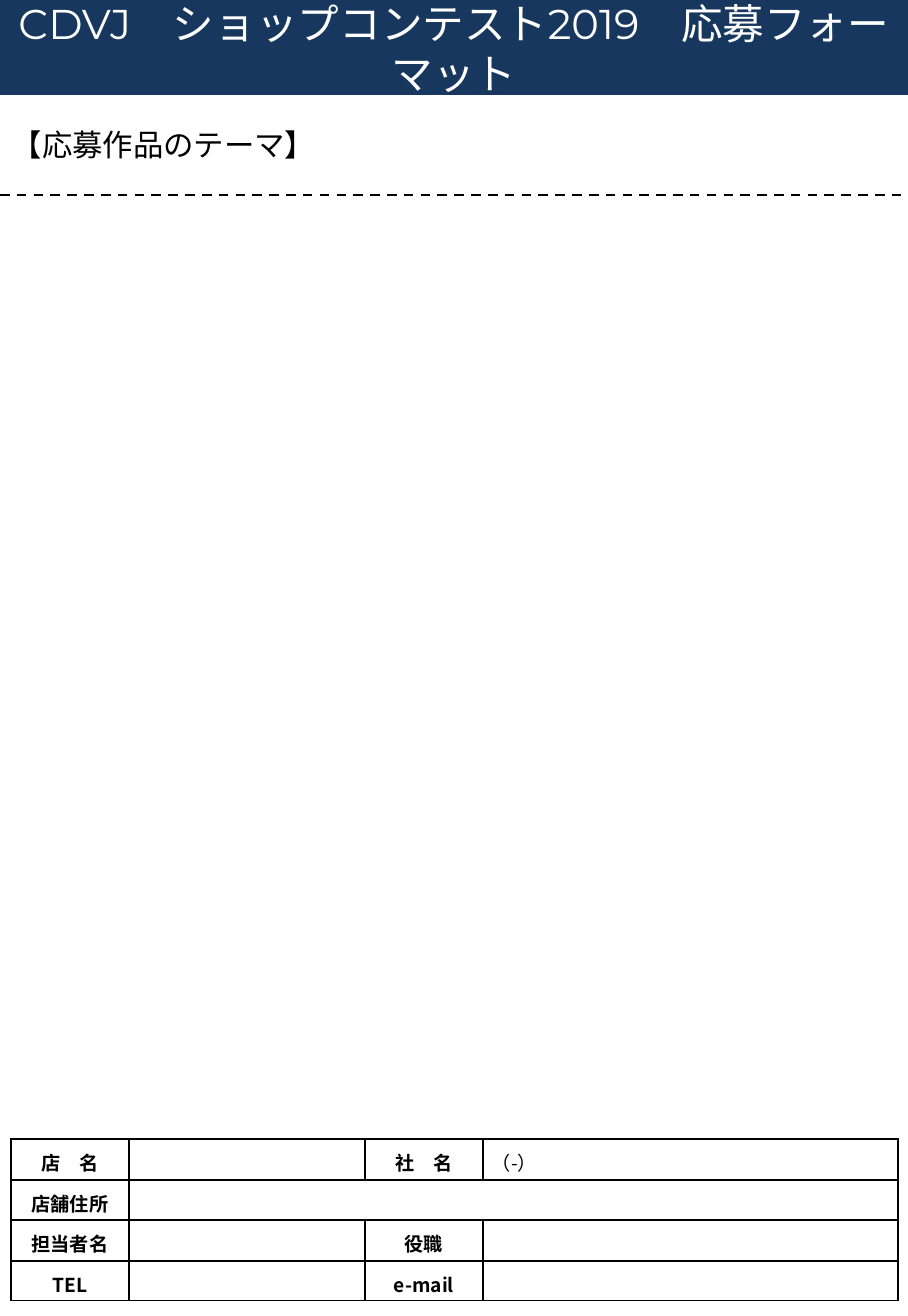
import pptx
import pptx.util
import pptx.dml.color
import pptx.enum.dml
import pptx.enum.shapes
import pptx.enum.text
import lxml.etree

WIDE, HIGH = 908, 1316
TITLE = "CDVJ\u3000ショップコンテスト2019\u3000応募フォーマット".replace("\u3000", "　")
THEME = "【応募作品のテーマ】"
ROWS = [
    ["店　名", "", "社　名", "（-）"],
    ["店舗住所", "", "", ""],
    ["担当者名", "", "役職", ""],
    ["TEL", "", "e-mail", ""],
]
COLS = [118, 236, 118, 415]
TALL = [41, 40, 41, 40]
SANS = "Noto Sans CJK JP"
INK, NAVY, WHITE = "000000", "17375E", "FFFFFF"
SPACE = "{http://schemas.openxmlformats.org/drawingml/2006/main}"


def px(n):
    return pptx.util.Emu(n * 914400 * 5 // 576)


def tint(code):
    return pptx.dml.color.RGBColor.from_string(code)


def add(node, tag, **attrs):
    return lxml.etree.SubElement(node, SPACE + tag, **attrs)


def write(frame, text, size, face, code, bold=False):
    frame.text = text
    frame.word_wrap = True
    para = frame.paragraphs[0]
    for run in para.runs:
        run.font.size = pptx.util.Pt(size)
        run.font.name = face
        run.font.bold = bold
        run.font.color.rgb = tint(code)
        add(run.font._element, "ea", typeface=face)
    return para


def pad(frame):
    frame.margin_left = frame.margin_right = px(12)
    frame.margin_top = frame.margin_bottom = px(6)


def edge(cell):
    props = cell._tc.get_or_add_tcPr()
    for side in ("lnL", "lnR", "lnT", "lnB"):
        line = add(props, side, w=str(pptx.util.Pt(1)))
        add(add(line, "solidFill"), "srgbClr", val=INK)
    cell.fill.background()


def head(slide):
    bar = slide.shapes.add_shape(
        pptx.enum.shapes.MSO_SHAPE.RECTANGLE, 0, 0, px(WIDE), px(95))
    bar.shadow.inherit = False
    bar.fill.solid()
    bar.fill.fore_color.rgb = tint(NAVY)
    bar.line.fill.background()
    pad(bar.text_frame)
    bar.text_frame.vertical_anchor = pptx.enum.text.MSO_ANCHOR.MIDDLE
    para = write(bar.text_frame, TITLE, 26, "Montserrat", WHITE)
    para.alignment = pptx.enum.text.PP_ALIGN.CENTER


def theme(slide):
    box = slide.shapes.add_textbox(0, px(120), px(WIDE), px(50))
    pad(box.text_frame)
    write(box.text_frame, THEME, 19, SANS, INK)
    rule = slide.shapes.add_connector(
        pptx.enum.shapes.MSO_CONNECTOR.STRAIGHT, 0, px(195), px(WIDE), px(195))
    rule.line.color.rgb = tint(INK)
    rule.line.width = pptx.util.Pt(1.5)
    rule.line.dash_style = pptx.enum.dml.MSO_LINE.DASH
    add(rule._element.spPr, "effectLst")


def form(slide):
    table = slide.shapes.add_table(
        len(ROWS), len(COLS), px(11), px(1139), px(sum(COLS)), px(sum(TALL))).table
    table.first_row = table.horz_banding = False
    for col, wide in zip(table.columns, COLS):
        col.width = px(wide)
    for row, tall, texts in zip(table.rows, TALL, ROWS):
        row.height = px(tall)
        for i, (cell, text) in enumerate(zip(row.cells, texts)):
            label = i % 2 == 0
            edge(cell)
            cell.margin_left = cell.margin_right = cell.margin_top = px(9)
            cell.margin_bottom = px(3)
            cell.vertical_anchor = pptx.enum.text.MSO_ANCHOR.MIDDLE
            para = write(cell.text_frame, text, 12, SANS, INK, label)
            if label:
                para.alignment = pptx.enum.text.PP_ALIGN.CENTER
            add(para._p, "endParaRPr", sz="1200")
    table.cell(1, 1).merge(table.cell(1, 3))


def main():
    """Build the contest entry form."""
    deck = pptx.Presentation()
    deck.slide_width, deck.slide_height = px(WIDE), px(HIGH)
    slide = deck.slides.add_slide(deck.slide_layouts[6])
    head(slide)
    theme(slide)
    form(slide)
    deck.save("out.pptx")


if __name__ == "__main__":
    main()
